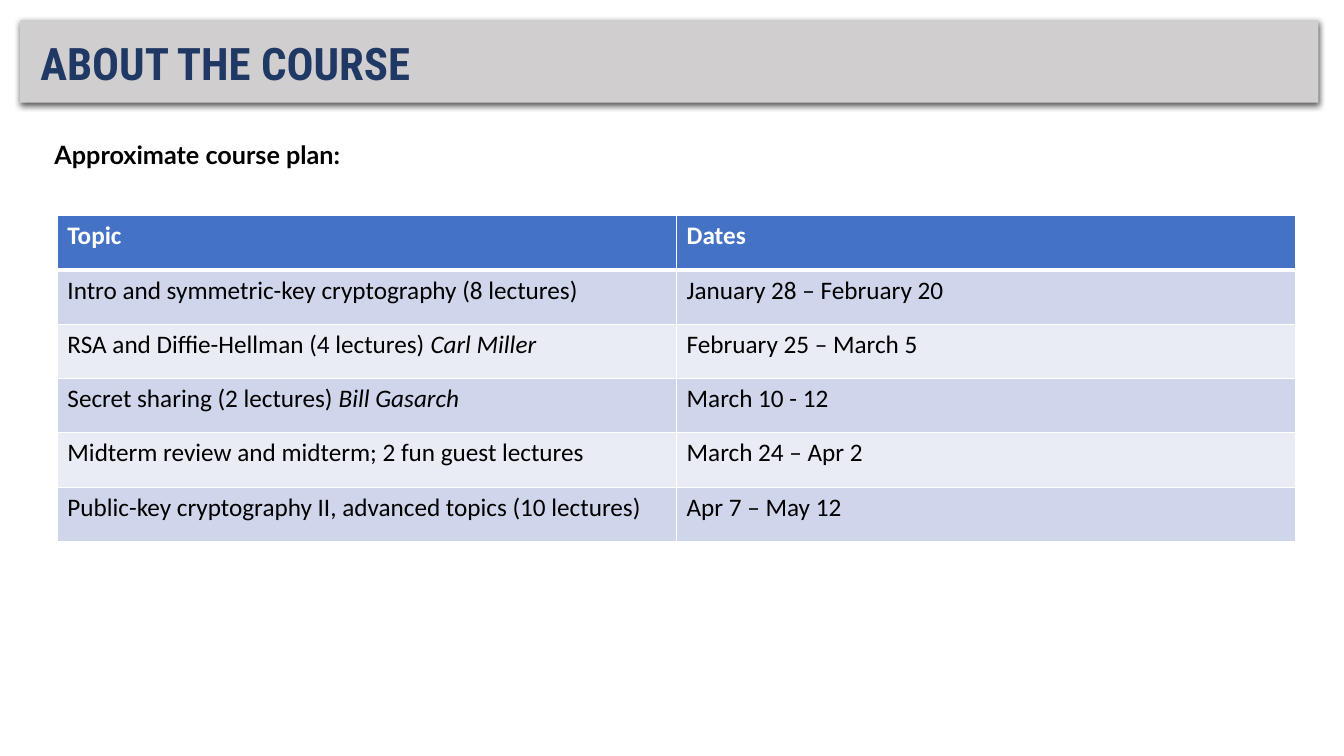
"""Build the course plan slide with a title bar and a table of dates."""
from dataclasses import dataclass

from lxml import etree
from pptx import Presentation
from pptx.dml.color import RGBColor
from pptx.enum.shapes import MSO_SHAPE
from pptx.enum.text import MSO_ANCHOR, MSO_AUTO_SIZE, PP_ALIGN
from pptx.oxml import parse_xml
from pptx.oxml.ns import qn
from pptx.util import Pt

RECT = MSO_SHAPE.RECTANGLE
TOP, MIDDLE = MSO_ANCHOR.TOP, MSO_ANCHOR.MIDDLE
NO_FIT = MSO_AUTO_SIZE.NONE
LEFT = PP_ALIGN.LEFT
NS = "http://schemas.openxmlformats.org/drawingml/2006/main"
COLORS = {
    "bar": "D0CECE", "title": "203864", "text": "000000", "white": "FFFFFF",
    "head": "4472C4", "odd": "CFD5EA", "even": "E9EBF5",
}


@dataclass(frozen=True)
class Box:
    """Place and size in points."""
    left: float
    top: float
    width: float
    height: float


@dataclass(frozen=True)
class Style:
    """Look of a text run."""
    font: str
    size: float
    color: str
    bold: bool = False


@dataclass(frozen=True)
class Row:
    """One line of the course plan."""
    topic: str
    dates: str
    guest: str = ""


BAR = Box(14.4, 14.4, 927.4, 59)
TITLE = Box(21.6, 20.2, 923.8, 54)
BODY = Box(31.7, 98.6, 884.9, 421.2)
PLAN = Box(41, 154.1, 884.6, 232.8)
TITLE_STYLE = Style("Roboto Condensed", 32, "title", True)
BODY_STYLE = Style("Lato", 18, "text", True)
HEAD_STYLE = Style("Calibri", 18, "white", True)
CELL_STYLE = Style("Calibri", 18, "text")
ROWS = [
    Row("Topic", "Dates"),
    Row("Intro and symmetric-key cryptography (8 lectures)", "January 28 – February 20"),
    Row("RSA and Diffie-Hellman (4 lectures) ", "February 25 – March 5", "Carl Miller"),
    Row("Secret sharing (2 lectures) ", "March 10 - 12", "Bill Gasarch"),
    Row("Midterm review and midterm; 2 fun guest lectures", "March 24 – Apr 2"),
    Row("Public-key cryptography II, advanced topics (10 lectures)", "Apr 7 – May 12"),
]


def tint(name: str) -> RGBColor:
    """Return a named color."""
    return RGBColor.from_string(COLORS[name])


def spread(box: Box) -> tuple:
    """Return the four lengths of a box."""
    return Pt(box.left), Pt(box.top), Pt(box.width), Pt(box.height)


def add_run(para, text: str, style: Style, slant: bool = False) -> None:
    """Add one styled run to a paragraph."""
    run = para.add_run()
    run.text = text
    font = run.font
    font.name, font.size = style.font, Pt(style.size)
    font.bold, font.italic = style.bold, slant
    font.color.rgb = tint(style.color)


def fill_holder(holder, box: Box, text: str, style: Style, anchor, before: float) -> None:
    """Move a placeholder and write one plain line in it."""
    holder.left, holder.top, holder.width, holder.height = spread(box)
    frame = holder.text_frame
    frame.word_wrap, frame.auto_size = True, NO_FIT
    frame.vertical_anchor = anchor
    para = frame.paragraphs[0]
    para.alignment, para.line_spacing, para.space_before = LEFT, 0.9, Pt(before)
    props = para._p.get_or_add_pPr()
    props.set("marL", "0")
    props.set("indent", "0")
    etree.SubElement(props, qn("a:buNone"))
    add_run(para, text, style)


def add_bar(slide) -> None:
    """Draw the title bar with its shadow behind all else."""
    bar = slide.shapes.add_shape(RECT, *spread(BAR))
    bar.fill.solid()
    bar.fill.fore_color.rgb = tint("bar")
    bar.line.fill.background()
    bar._element.spPr.append(parse_xml(
        f'<a:effectLst xmlns:a="{NS}"><a:outerShdw blurRad="{Pt(4.5)}" dist="{Pt(1.5)}" '
        f'dir="5400000" algn="ctr" rotWithShape="0"><a:srgbClr val="{COLORS["text"]}">'
        '<a:alpha val="63000"/></a:srgbClr></a:outerShdw></a:effectLst>'))
    slide.shapes._spTree.insert(2, bar._element)


def rule_cell(cell, top: float, bottom: float) -> None:
    """Give a cell white borders."""
    props = cell._tc.get_or_add_tcPr()
    for side, width in (("L", 1), ("R", 1), ("T", top), ("B", bottom)):
        props.append(parse_xml(
            f'<a:ln{side} xmlns:a="{NS}" w="{Pt(width)}"><a:solidFill>'
            f'<a:srgbClr val="{COLORS["white"]}"/></a:solidFill></a:ln{side}>'))


def add_plan(slide) -> None:
    """Add the table of topics and dates."""
    table = slide.shapes.add_table(len(ROWS), 2, *spread(PLAN)).table
    for num, row in enumerate(ROWS):
        style = CELL_STYLE if num else HEAD_STYLE
        shade = ("even", "odd")[num % 2] if num else "head"
        for col, text in enumerate((row.topic, row.dates)):
            cell = table.cell(num, col)
            rule_cell(cell, 3 if num == 1 else 1, 1 if num else 3)
            cell.fill.solid()
            cell.fill.fore_color.rgb = tint(shade)
            add_run(cell.text_frame.paragraphs[0], text, style)
        if row.guest:
            add_run(table.cell(num, 0).text_frame.paragraphs[0], row.guest, style, True)


def main() -> None:
    """Build and save the slide."""
    deck = Presentation()
    deck.slide_width, deck.slide_height = Pt(960), Pt(540)
    slide = deck.slides.add_slide(deck.slide_layouts[1])
    title, body = slide.placeholders
    fill_holder(title, TITLE, "ABOUT THE COURSE", TITLE_STYLE, MIDDLE, 0)
    fill_holder(body, BODY, "Approximate course plan:", BODY_STYLE, TOP, 10)
    add_bar(slide)
    add_plan(slide)
    deck.save("out.pptx")


if __name__ == "__main__":
    main()
